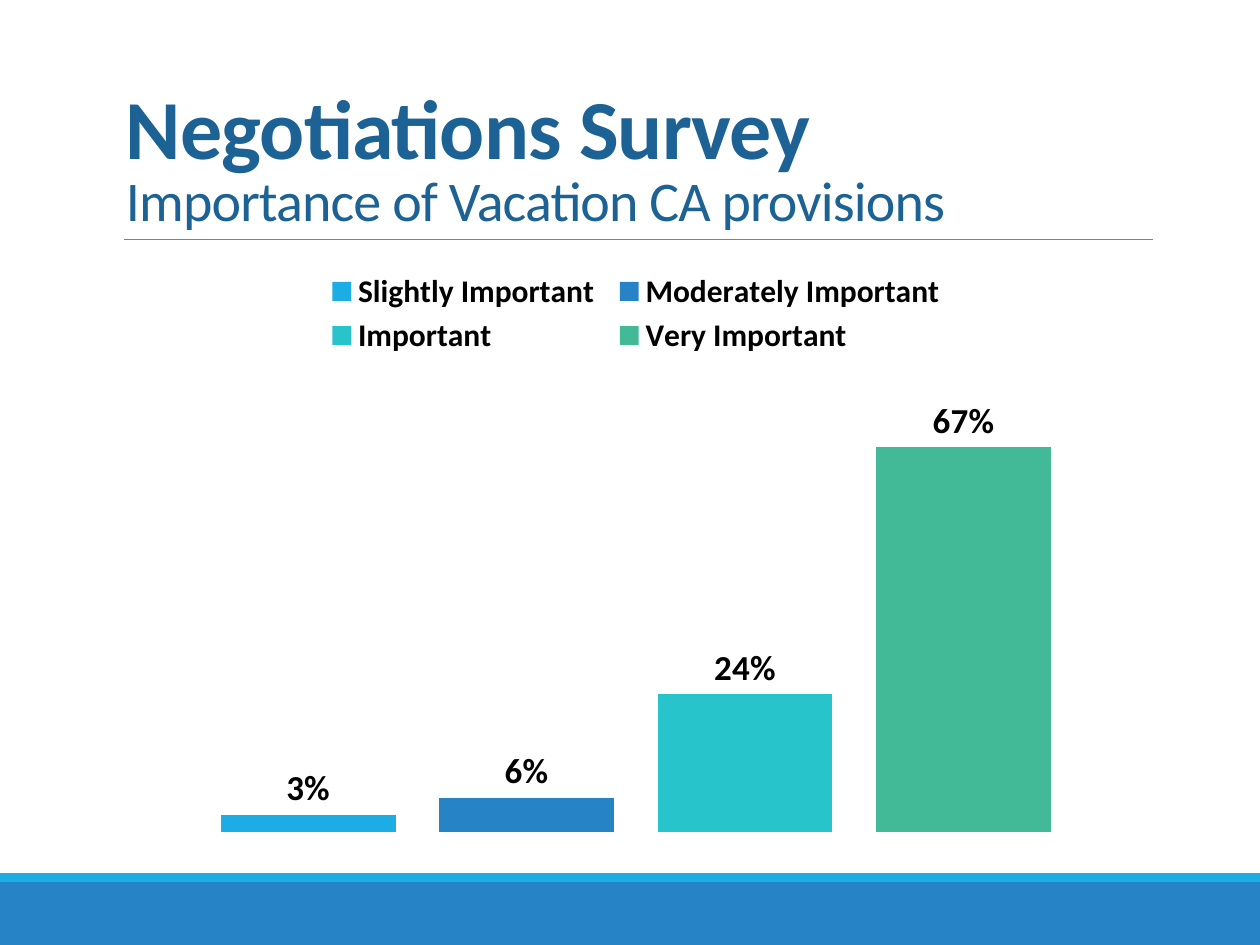
from lxml import etree
from pptx import Presentation
from pptx.chart.data import CategoryChartData
from pptx.dml.color import RGBColor
from pptx.enum.chart import XL_CHART_TYPE, XL_LABEL_POSITION, XL_LEGEND_POSITION
from pptx.enum.shapes import MSO_CONNECTOR, MSO_SHAPE
from pptx.enum.text import MSO_ANCHOR
from pptx.oxml.ns import qn
from pptx.util import Cm, Pt

COLUMN = XL_CHART_TYPE.COLUMN_CLUSTERED
OUTSIDE = XL_LABEL_POSITION.OUTSIDE_END
TOP = XL_LEGEND_POSITION.TOP
STRAIGHT = MSO_CONNECTOR.STRAIGHT
RECT = MSO_SHAPE.RECTANGLE
BOTTOM = MSO_ANCHOR.BOTTOM

WIDTH, HEIGHT = 25.4, 19.05
SKY, BLUE, TEAL, GREEN = "1CADE4", "2683C6", "28C4CC", "42BA97"
NAVY, GREY, BLACK = "1D6294", "808080", "000000"

SURVEY = [
    ("Slightly Important", 0.03, SKY),
    ("Moderately Important", 0.06, BLUE),
    ("Important", 0.24, TEAL),
    ("Very Important", 0.67, GREEN),
]


def color(code):
    return RGBColor.from_string(code)


def format(item, **values):
    for name, value in values.items():
        setattr(item, name, value)


def place(node, index, **box):
    """Fix a chart part at fractions of the chart's size."""
    for old in node.findall(qn("c:layout")):
        node.remove(old)
    layout = etree.Element(qn("c:layout"))
    node.insert(index, layout)
    manual = etree.SubElement(layout, qn("c:manualLayout"))
    for name, value in box.items():
        etree.SubElement(manual, qn(f"c:{name}")).set("val", str(value))


class Deck:
    """Holds the font and the current slide."""

    def __init__(self, font):
        self.font = font
        self.file = Presentation()
        format(self.file, slide_width=Cm(WIDTH), slide_height=Cm(HEIGHT))
        self.slide = self.file.slides.add_slide(self.file.slide_layouts[6])
        self.shapes = self.slide.shapes

    def style(self, font, size, code, bold):
        format(font, name=self.font, size=Pt(size), bold=bold)
        font.color.rgb = color(code)

    def band(self, top, height, code):
        band = self.shapes.add_shape(RECT, 0, Cm(top), Cm(WIDTH), Cm(height))
        band.shadow.inherit = False
        band.fill.solid()
        band.fill.fore_color.rgb = color(code)
        band.line.fill.background()

    def rule(self, left, right, y, code):
        rule = self.shapes.add_connector(STRAIGHT, Cm(left), Cm(y), Cm(right), Cm(y))
        rule.line.color.rgb = color(code)
        rule.line.width = Pt(0.5)
        etree.SubElement(rule._element.spPr, qn("a:effectLst"))

    def title(self, box, lines):
        frame = self.shapes.add_textbox(*map(Cm, box)).text_frame
        format(frame, word_wrap=True, vertical_anchor=BOTTOM)
        para = frame.paragraphs[0]
        para.line_spacing = 0.85
        for index, (text, size, bold) in enumerate(lines):
            if index:
                para.add_line_break()
            run = para.add_run()
            run.text = text
            self.style(run.font, size, NAVY, bold)
            run.font._element.set("spc", "-50")

    def chart(self, box, rows):
        data = CategoryChartData(number_format="0%")
        data.categories = ["1"]
        for name, value, _ in rows:
            data.add_series(name, [value])
        chart = self.shapes.add_chart(COLUMN, *map(Cm, box), data).chart
        format(chart, has_title=False, has_legend=True)
        self.style(chart.font, 10, BLACK, False)
        format(chart.legend, position=TOP, include_in_layout=False)
        self.style(chart.legend.font, 18, BLACK, True)
        format(chart.category_axis, visible=False)
        format(chart.value_axis, visible=False, has_major_gridlines=False,
               minimum_scale=0, maximum_scale=0.8)
        plot = chart.plots[0]
        format(plot, gap_width=150, overlap=-25, vary_by_categories=False)
        for series, (_, _, code) in zip(plot.series, rows):
            series.format.fill.solid()
            series.format.fill.fore_color.rgb = color(code)
            labels = series.data_labels
            format(labels, show_value=True, position=OUTSIDE,
                   number_format="0%", number_format_is_linked=False)
            self.style(labels.font, 20, BLACK, True)
        space = chart._chartSpace
        place(space.find(".//" + qn("c:plotArea")), 0, layoutTarget="inner",
              xMode="edge", yMode="edge", x=0.02, y=0.2, w=0.96, h=0.78)
        place(space.find(".//" + qn("c:legend")), 1,
              xMode="edge", yMode="edge", x=0.22, y=0.02, w=0.56, h=0.16)


def main():
    deck = Deck("Calibri")
    deck.band(17.78, 1.27, BLUE)
    deck.band(17.6, 0.18, SKY)
    deck.rule(2.49, 23.24, 4.83, GREY)
    deck.title((2.29, 0.79, 20.96, 4.04), [
        ("Negotiations Survey", 48, True),
        ("Importance of Vacation CA provisions", 32, False),
    ])
    deck.chart((1.35, 5.13, 22.94, 11.89), SURVEY)
    deck.file.save("out.pptx")


if __name__ == "__main__":
    main()
